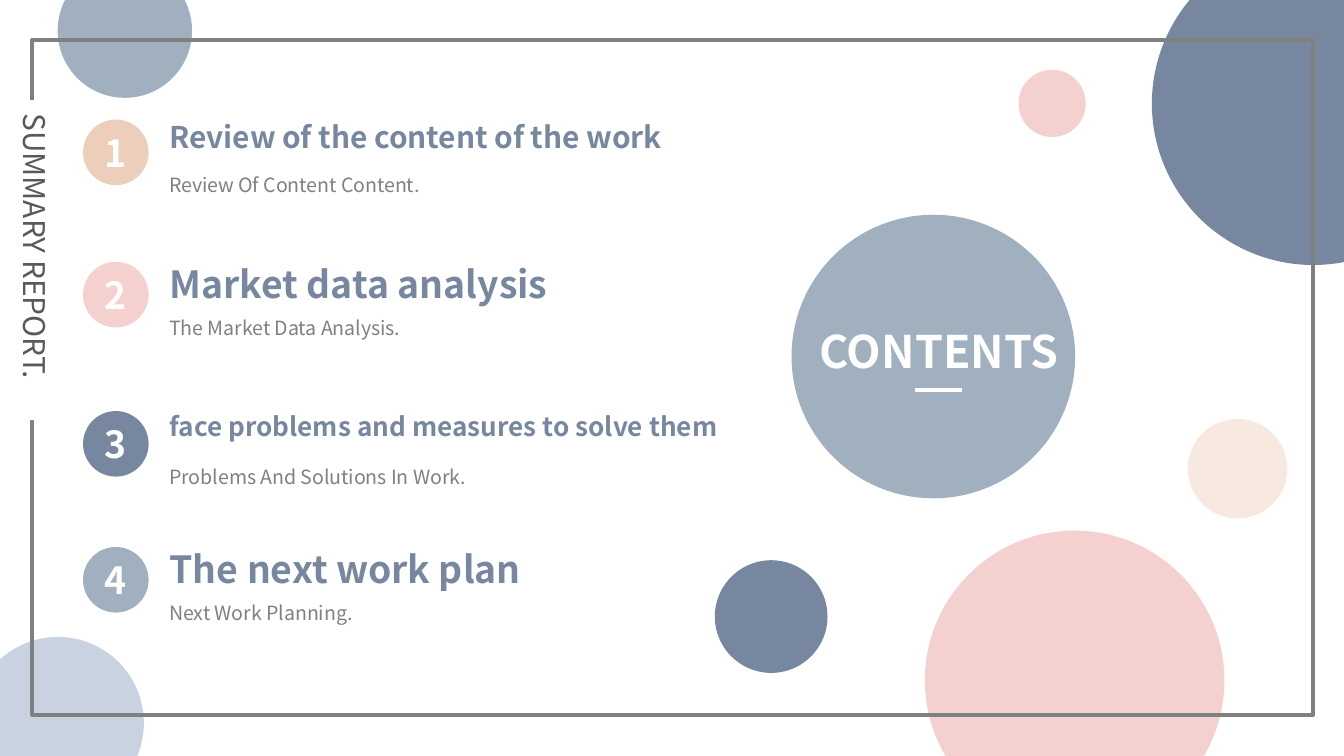
import pptx
import pptx.util
import pptx.dml.color
import pptx.enum.shapes
import pptx.enum.text
import pptx.oxml
import pptx.oxml.ns
from dataclasses import dataclass

Cm, Pt = pptx.util.Cm, pptx.util.Pt
KIND = pptx.enum.shapes.MSO_SHAPE
TEXT = pptx.enum.text


@dataclass(frozen=True)
class Theme:
    font: str = "Noto Sans CJK SC"
    white: str = "FFFFFF"
    navy: str = "7787A0"
    steel: str = "A0B0BF"
    mist: str = "C9D2E1"
    rose: str = "F4D1CF"
    peach: str = "EDCEBB"
    cream: str = "F7E9E0"
    gray: str = "808080"
    dark: str = "595959"
    title: float = 24
    head: float = 20
    label: float = 16
    note: float = 10.5
    line: float = 2.25


T = Theme()

# Content: badge top, colour, heading, its size and width, note, its width
ROWS = [
    (2.26, T.peach, "Review of the content of the work", 16, 10.49,
     "Review Of Content Content.", 5.33),
    (4.95, T.rose, "Market data analysis", T.head, 7.92,
     "The Market Data Analysis.", 5.33),
    (7.77, T.navy, "face problems and measures to solve them", 14, 11.43,
     "Problems And Solutions In Work.", 8.71),
    (10.34, T.steel, "The next work plan", T.head, 7.42,
     "Next Work Planning.", 8.71),
]
# Circles: left, top, diameter, colour
BACK = [
    (14.96, 4.06, 5.36, T.steel),
    (21.77, -1.09, 6.1, T.navy),
    (17.48, 10.03, 5.66, T.rose),
    (22.45, 7.92, 1.88, T.cream),
    (1.09, -0.69, 2.54, T.steel),
    (-0.53, 12.04, 3.25, T.mist),
    (13.51, 10.59, 2.13, T.navy),
]
DOT = (19.25, 1.32, 1.27, T.rose)
BADGE_X, BADGE, TEXT_X = 1.57, 1.24, 2.95

deck = pptx.Presentation()
deck.slide_width, deck.slide_height = Cm(25.4), Cm(14.29)
# The Comparison layout has a title and four body placeholders
slide = deck.slides.add_slide(deck.slide_layouts[4])
shapes = slide.shapes
title, *heads = list(slide.placeholders)


def rgb(code):
    return pptx.dml.color.RGBColor.from_string(code)


def shape(kind, x, y, w, h, fill=None, line=None):
    item = shapes.add_shape(kind, Cm(x), Cm(y), Cm(w), Cm(h))
    item.shadow.inherit = False
    if fill:
        item.fill.solid()
        item.fill.fore_color.rgb = rgb(fill)
    else:
        item.fill.background()
    if line:
        item.line.color.rgb = rgb(line)
        item.line.width = Pt(T.line)
    else:
        item.line.fill.background()
    return item


def circle(x, y, size, fill):
    return shape(KIND.OVAL, x, y, size, size, fill)


def write(text, x, y, w, size, color, bold=False, center=False, wrap=False,
          box=None):
    """Put text in a box, a placeholder or a new text box, on top."""
    high = 0.25 + 0.043 * size
    if box is None:
        box = shapes.add_textbox(0, 0, 0, 0)
    box.left, box.top, box.width, box.height = Cm(x), Cm(y), Cm(w), Cm(high)
    shapes._spTree.append(box._element)
    frame = box.text_frame
    frame.text = text
    frame.word_wrap = wrap
    frame.auto_size = TEXT.MSO_AUTO_SIZE.SHAPE_TO_FIT_TEXT
    frame.vertical_anchor = TEXT.MSO_ANCHOR.TOP
    para = frame.paragraphs[0]
    para.alignment = TEXT.PP_ALIGN.CENTER if center else TEXT.PP_ALIGN.LEFT
    para.line_spacing = 1.0
    para.space_before = para.space_after = Pt(0)
    if box.is_placeholder:
        props = para._p.get_or_add_pPr()
        props.set("marL", "0")
        props.set("indent", "0")
        props.append(pptx.oxml.parse_xml(
            "<a:buNone %s/>" % pptx.oxml.ns.nsdecls("a")))
    font = para.runs[0].font
    font.name, font.size, font.bold = T.font, Pt(size), bold
    font.color.rgb = rgb(color)
    return box


# Background circles and frame
for spot in BACK:
    circle(*spot)
shape(KIND.RECTANGLE, 0.61, 0.76, 24.21, 12.75, line=T.gray)

# Side label, masking part of the frame
label = shape(KIND.RECTANGLE, 0, 0, 1, 1, T.white)
write("SUMMARY REPORT.", -2.36, 4.45, 6.05, T.label, T.dark, box=label)
label.rotation = 90
circle(*DOT)

# Agenda rows
for num, (row, head) in enumerate(zip(ROWS, heads), 1):
    top, color, text, size, wide, note, span = row
    write(text, TEXT_X, top - 0.14, wide, size, T.navy, bold=True, box=head)
    write(note, TEXT_X, top + 0.89, span, T.note, T.gray, wrap=True)
    circle(BADGE_X, top, BADGE, color)
    write(str(num), 1.7, top + 0.07, 0.97, T.head, T.white, bold=True,
          center=True)

# Title and its underline
write("CONTENTS", 15.09, 5.99, 5.31, T.title, T.white, bold=True, center=True,
      box=title)
rule = shapes.add_connector(pptx.enum.shapes.MSO_CONNECTOR.STRAIGHT,
                            Cm(17.3), Cm(7.37), Cm(18.19), Cm(7.37))
rule.line.color.rgb = rgb(T.white)
rule.line.width = Pt(T.line)
rule._element.spPr.append(pptx.oxml.parse_xml(
    "<a:effectLst %s/>" % pptx.oxml.ns.nsdecls("a")))

deck.save("out.pptx")
